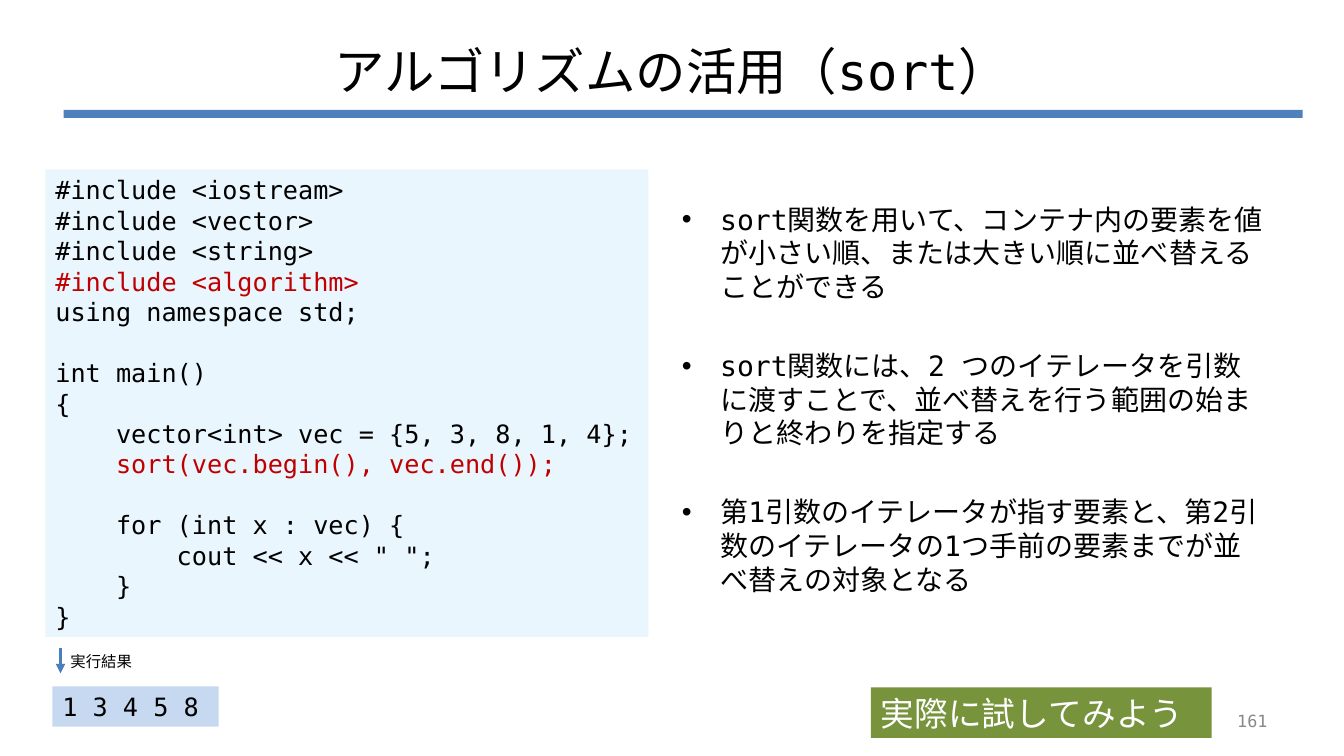
from pptx import Presentation
from pptx.dml.color import RGBColor as Rgb
from pptx.enum.shapes import MSO_CONNECTOR as Connector, MSO_SHAPE as Preset
from pptx.enum.text import MSO_ANCHOR as Anchor, PP_ALIGN as Align
from pptx.oxml.ns import qn
from pptx.util import Inches, Pt
from lxml.etree import SubElement

THEME = {
    "black": "000000", "white": "FFFFFF", "grey": "898989", "red": "C00000",
    "bar": "4F81BD", "arrow": "4B7EBC", "code_fill": "EAF6FD",
    "result_fill": "C6D9F1", "try_fill": "77933C",
    "title": 36, "call": 24, "body": 20, "code": 18, "number": 12, "label": 11,
    "mono": "DejaVu Sans Mono", "sans": "Arial", "kanji": "Noto Sans CJK JP",
}
LEADING = 1.21  # line pitch as a share of the type size

deck = Presentation()
deck.slide_width, deck.slide_height = Inches(13.33), Inches(7.5)
page = deck.slides.add_slide(deck.slide_layouts[6])

# Grid: 100 columns by 100 rows
COLUMN, ROW = deck.slide_width / 100, deck.slide_height / 100


def add_block(column, row, columns, rows, fill=None):
    """Place a text box, or a filled rectangle, on the grid."""
    place = [round(n) for n in (column * COLUMN, row * ROW, columns * COLUMN, rows * ROW)]
    if fill is None:
        return page.shapes.add_textbox(*place)
    block = page.shapes.add_shape(Preset.RECTANGLE, *place)
    block.shadow.inherit = False
    block.fill.solid()
    block.fill.fore_color.rgb = Rgb.from_string(THEME[fill])
    block.line.fill.background()
    return block


def write(box, lines, size, color="black", east="kanji", anchor=Anchor.TOP,
          wrap=True, accents=(), **layout):
    """Write one paragraph per line; accented lines are red after their indent."""
    frame = box.text_frame
    frame.word_wrap, frame.vertical_anchor = wrap, anchor
    layout = {"alignment": Align.LEFT, **layout}
    for index, line in enumerate(lines):
        para = frame.paragraphs[0] if index == 0 else frame.add_paragraph()
        for name, value in layout.items():
            if index or name != "space_before":
                setattr(para, name, value)
        para.font.size = Pt(THEME[size])
        code = line.lstrip()
        accented = code in accents
        indent = line[:len(line) - len(code)] if accented else ""
        for text in filter(None, (indent, line[len(indent):])):
            span = para.add_run()
            span.text = text
            for name, value in {"size": Pt(THEME[size]), "name": THEME["mono"]}.items():
                setattr(span.font, name, value)
            span.font.color.rgb = Rgb.from_string(THEME["red" if accented else color])
            SubElement(span.font._element, qn("a:ea"), typeface=THEME[east])


# Title, rule below it and page number
add_block(4.73, 14.53, 92.2, 1.07, "bar")
write(add_block(5, 4, 90, 10.53), ["アルゴリズムの活用（sort）"], "title",
      east="sans", anchor=Anchor.MIDDLE, alignment=Align.CENTER)
write(add_block(71.72, 92.67, 23.33, 5.33), ["161"], "number", "grey",
      anchor=Anchor.MIDDLE, alignment=Align.RIGHT)

# Program listing
program = """#include <iostream>
#include <vector>
#include <string>
#include <algorithm>
using namespace std;

int main()
{
    vector<int> vec = {5, 3, 8, 1, 4};
    sort(vec.begin(), vec.end());

    for (int x : vec) {
        cout << x << " ";
    }
}"""
write(add_block(3.38, 22.4, 44.86, 61.87, "code_fill"), program.split("\n"), "code",
      accents=("#include <algorithm>", "sort(vec.begin(), vec.end());"),
      line_spacing=Pt(THEME["code"] * LEADING))

# Program output
write(add_block(3.9, 90.8, 12.38, 5.33, "result_fill"), ["1 3 4 5 8"], "code",
      line_spacing=Pt(THEME["code"] * LEADING))

# Explanation
points = [
    "sort関数を用いて、コンテナ内の要素を値が小さい順、または大きい順に並べ替えることができる",
    "sort関数には、2 つのイテレータを引数に渡すことで、並べ替えを行う範囲の始まりと終わりを指定する",
    "第1引数のイテレータが指す要素と、第2引数のイテレータの1つ手前の要素までが並べ替えの対象となる",
]
explanation = add_block(50, 26.1, 45, 62.93)
write(explanation, points, "body", line_spacing=Pt(24), space_before=Pt(32.5))
for para in explanation.text_frame.paragraphs:
    settings = para._p.get_or_add_pPr()
    settings.set("marL", str(Inches(0.38)))
    settings.set("indent", str(-Inches(0.38)))
    bullet_font = SubElement(settings, qn("a:buFont"), typeface=THEME["sans"])
    bullet = SubElement(settings, qn("a:buChar"), char="•")
    defaults = settings.find(qn("a:defRPr"))
    if defaults is not None:
        settings.append(defaults)

# Arrow from the listing to the output
ends = (4.5 * COLUMN, 85.73 * ROW, 4.5 * COLUMN, 89.07 * ROW)
arrow = page.shapes.add_connector(Connector.STRAIGHT, *map(round, ends))
arrow.line.width = Pt(2.25)
arrow.line.color.rgb = Rgb.from_string(THEME["arrow"])
SubElement(arrow.line._get_or_add_ln(), qn("a:tailEnd"), type="triangle")
SubElement(arrow._element.spPr, qn("a:effectLst"))
write(add_block(4.5, 85.6, 6.15, 3.87), ["実行結果"], "label", east="sans", wrap=False)

# Call to action
write(add_block(64.8, 90.93, 25.35, 6.67, "try_fill"), ["実際に試してみよう"], "call",
      "white", east="mono", line_spacing=Pt(THEME["call"] * LEADING))

deck.save("out.pptx")
